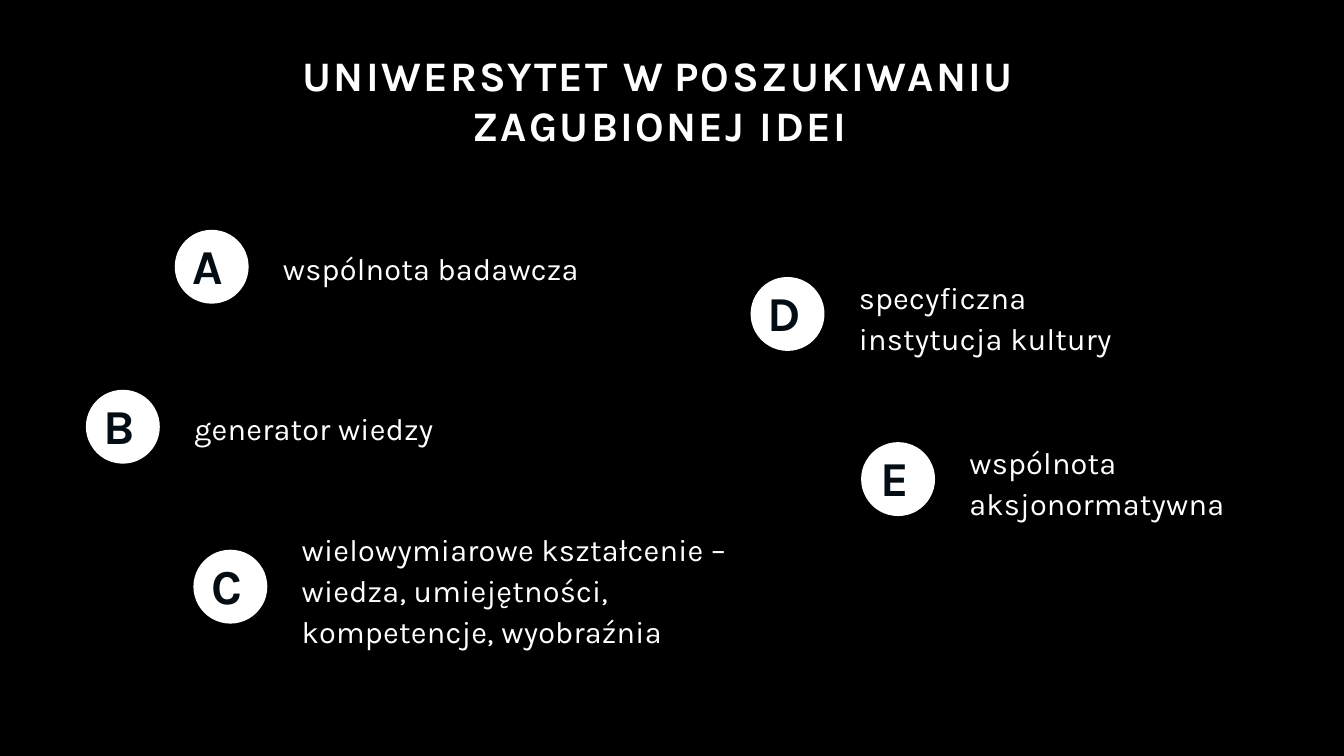
from dataclasses import dataclass

from pptx import Presentation
from pptx.dml.color import RGBColor
from pptx.enum.shapes import MSO_SHAPE
from pptx.enum.text import MSO_ANCHOR, MSO_AUTO_SIZE, PP_ALIGN
from pptx.util import Pt


@dataclass(frozen=True)
class Theme:
    """Colours, type and spacing shared by the whole slide."""
    font: str = "Karla"
    background: RGBColor = RGBColor(0x00, 0x00, 0x00)
    light: RGBColor = RGBColor(0xFF, 0xFF, 0xFF)
    dark: RGBColor = RGBColor(0x05, 0x0D, 0x14)
    title_size: float = 22.5
    letter_size: float = 26.1
    label_size: float = 16.4
    tracking: float = 0.1
    line_spacing: float = 1.11


THEME = Theme()
BADGE = 39.6
LABEL_INDENT = 58
LABEL_DROP = 1
LINE_HEIGHT = 21.5
ROW_TOP = 123.1
ROW_STEP = 85.7

TITLE = [("UNIWERSYTET ", 1.2), ("W ", 0), ("POSZUKIWANIU ", 1.3),
         ("ZAGUBIONEJ ", 1.2), ("IDEI", 1.3)]
IDEAS = [
    ("A", "wspólnota badawcza", 93.6, ROW_TOP, 165, 1),
    ("B", "generator wiedzy", 46, ROW_TOP + ROW_STEP, 137.5, 1),
    ("C", "wielowymiarowe kształcenie – wiedza, umiejętności, kompetencje, wyobraźnia",
     103.6, ROW_TOP + 2 * ROW_STEP, 245.5, 3),
    ("D", "specyficzna instytucja kultury", 402.1, 148.4, 140.4, 2),
    ("E", "wspólnota aksjonormatywna", 461.3, 236.9, 170, 2),
]


def format_run(run, size, color, bold=False, tracking=THEME.tracking):
    """Set the type of one run, with its letter spacing in points."""
    run.font.name = THEME.font
    run.font.size = Pt(size)
    run.font.bold = bold
    run.font.color.rgb = color
    run.font._element.set("spc", str(round(tracking * 100)))


def prepare_frame(frame, right=0):
    """Give a text frame wrapping, middle anchoring and tight margins."""
    frame.word_wrap = True
    frame.auto_size = MSO_AUTO_SIZE.NONE
    frame.vertical_anchor = MSO_ANCHOR.MIDDLE
    frame.margin_left = frame.margin_top = frame.margin_bottom = 0
    frame.margin_right = Pt(right)


def place_title(slide, left, top, width, height):
    """Place the heading in the title placeholder."""
    title = slide.shapes.title
    title.left, title.top = Pt(left), Pt(top)
    title.width, title.height = Pt(width), Pt(height)
    prepare_frame(title.text_frame)
    heading = title.text_frame.paragraphs[0]
    heading.alignment = PP_ALIGN.CENTER
    for words, tracking in TITLE:
        run = heading.add_run()
        run.text = words
        format_run(run, THEME.title_size, THEME.light, True, tracking)


def place_badge(slide, letter, left, top):
    """Draw a white disc with its letter."""
    badge = slide.shapes.add_shape(MSO_SHAPE.OVAL, Pt(left), Pt(top), Pt(BADGE), Pt(BADGE))
    badge.shadow.inherit = False
    badge.fill.solid()
    badge.fill.fore_color.rgb = THEME.light
    badge.line.fill.background()
    frame = badge.text_frame
    prepare_frame(frame, right=3.7)
    frame.word_wrap = False
    frame.margin_bottom = Pt(2)
    frame.text = letter
    frame.paragraphs[0].alignment = PP_ALIGN.CENTER
    format_run(frame.paragraphs[0].runs[0], THEME.letter_size, THEME.dark, True)


def place_idea(slide, letter, words, left, top, width, lines):
    """Place a badge and, centred beside it, its label."""
    place_badge(slide, letter, left, top)
    height = lines * LINE_HEIGHT
    label_top = top + BADGE / 2 + LABEL_DROP - height / 2
    label = slide.shapes.add_textbox(
        Pt(left + LABEL_INDENT), Pt(label_top), Pt(width), Pt(height))
    frame = label.text_frame
    prepare_frame(frame)
    frame.text = words
    if lines > 1:
        frame.paragraphs[0].line_spacing = THEME.line_spacing
    format_run(frame.paragraphs[0].runs[0], THEME.label_size, THEME.light)


def main():
    """Build the slide and save it."""
    deck = Presentation()
    deck.slide_width, deck.slide_height = Pt(720), Pt(405)
    slide = deck.slides.add_slide(deck.slide_layouts[5])
    slide.background.fill.solid()
    slide.background.fill.fore_color.rgb = THEME.background
    place_title(slide, 143.3, 26, 419.8, 54.7)
    for idea in IDEAS:
        place_idea(slide, *idea)
    deck.save("out.pptx")


if __name__ == "__main__":
    main()
